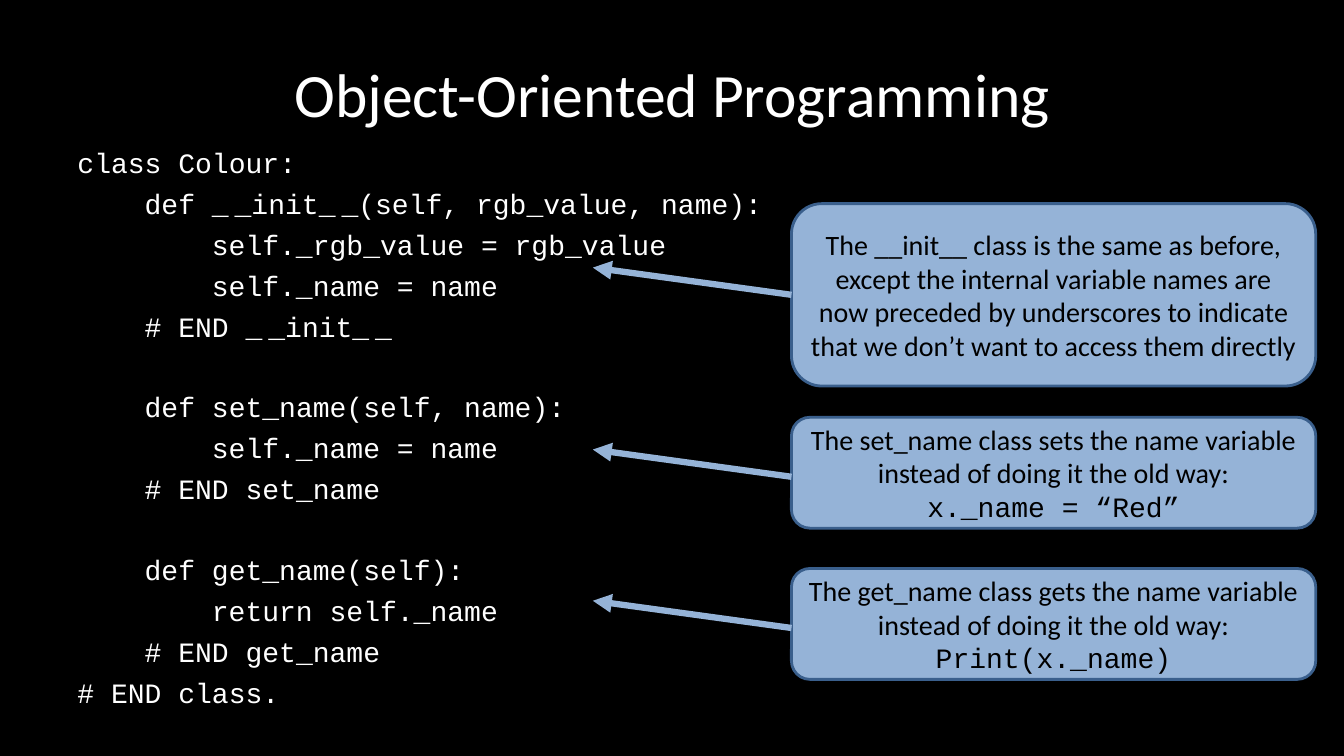
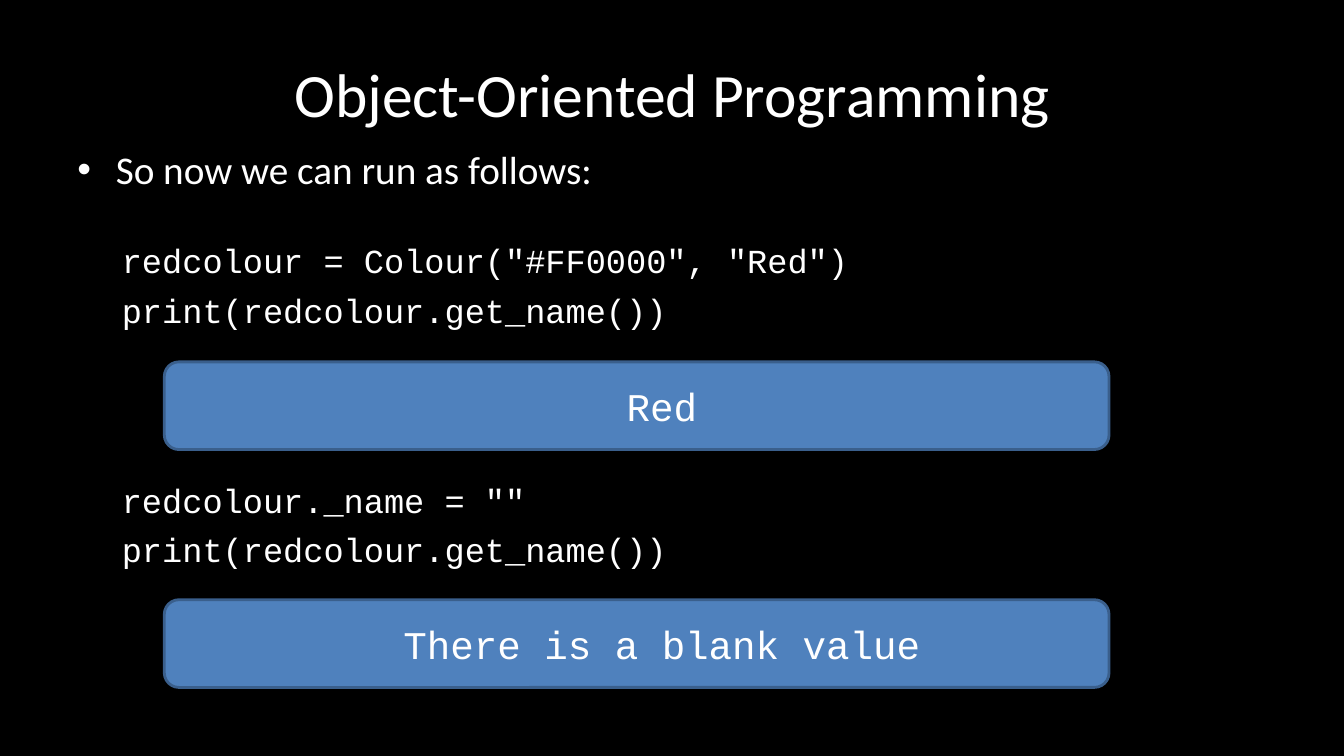
from dataclasses import dataclass

from lxml import etree
from pptx import Presentation
from pptx.dml.color import RGBColor
from pptx.enum.shapes import MSO_CONNECTOR, MSO_SHAPE
from pptx.enum.text import MSO_ANCHOR, PP_ALIGN
from pptx.oxml.ns import qn
from pptx.util import Inches, Pt

LEFT, CENTER = PP_ALIGN.LEFT, PP_ALIGN.CENTER
TOP, MIDDLE = MSO_ANCHOR.TOP, MSO_ANCHOR.MIDDLE
ROUND, STRAIGHT = MSO_SHAPE.ROUNDED_RECTANGLE, MSO_CONNECTOR.STRAIGHT
LEFT_SIDE = 1


@dataclass(frozen=True)
class Theme:
    black: str = "000000"
    white: str = "FFFFFF"
    pale: str = "95B3D7"
    blue: str = "4F81BD"
    edge: str = "3A5F8C"
    sans: str = "Calibri"
    mono: str = "Courier New"
    title: int = 44
    lead: int = 28
    code: int = 24
    small: int = 20
    tiny: int = 7
    gap: float = 4 / 15  # space before a line, as a share of its size
    pitch: float = 1.4  # one code line with its gap, as a share of its size


T = Theme()


@dataclass(frozen=True)
class Box:
    left: float
    top: float
    width: float
    height: float

    def emu(self):
        return [Inches(v) for v in (self.left, self.top, self.width, self.height)]


@dataclass(frozen=True)
class Code:
    text: str
    depth: int = 0
    skip: float = 0  # points left free above the line


@dataclass(frozen=True)
class Note:
    top: float
    height: float
    text: str
    code: str = ""
    drop: float = 0  # arrow start below the middle of the side


TITLE = Box(0.67, 0.3, 12, 1.25)
BODY = Box(0.67, 1.39, 12, 5.75)
STEP = 4 * 0.6 * T.small / 72  # four monospaced characters
BLANK = T.small * T.pitch

CLASS = [
    Code("class Colour:"),
    Code("def _ _init_ _(self, rgb_value, name):", 1),
    Code("self._rgb_value = rgb_value", 2),
    Code("self._name = name", 2),
    Code("# END _ _init_ _", 1),
    Code("def set_name(self, name):", 1, BLANK),
    Code("self._name = name", 2),
    Code("# END set_name", 1),
    Code("def get_name(self):", 1, BLANK),
    Code("return self._name", 2),
    Code("# END get_name", 1),
    Code("# END class."),
]
NOTES = [
    Note(2.02, 1.81, "The __init__ class is the same as before, except the internal "
         "variable names are now preceded by underscores to indicate that we "
         "don’t want to access them directly"),
    Note(4.14, 1.1, "The set_name class sets the name variable instead of doing it "
         "the old way:", "x._name = “Red”", 0.04),
    Note(5.64, 1.1, "The get_name class gets the name variable instead of doing it "
         "the old way:", "Print(x._name)", 0.04),
]
RUN = [
    Code('redcolour = Colour("#FF0000", "Red")', skip=BLANK),
    Code("print(redcolour.get_name())"),
    Code('redcolour._name = ""', skip=3 * T.code * T.pitch),
    Code("print(redcolour.get_name())"),
]
RESULTS = [(3.59, "Red"), (5.95, "There is a blank value")]


def paint(color: str) -> RGBColor:
    return RGBColor.from_string(color)


def write(frame, text: str, *, size: float, font: str = T.sans, color: str = T.white,
          align=LEFT, before: float = 0, indent: float = 0, bullet: str = "") -> None:
    """Add a paragraph; a space between two underscores is set tiny."""
    para = frame.paragraphs[-1]
    if para.runs:
        para = frame.add_paragraph()
    para.alignment = align
    para.space_before = Pt(before)
    props = para._p.get_or_add_pPr()
    props.set("marL", str(Inches(indent)))
    if bullet:
        props.set("indent", str(-Inches(indent)))
        etree.SubElement(props, qn("a:buFont"), typeface="Arial")
        etree.SubElement(props, qn("a:buChar"), char=bullet)
    pieces = [(text, size)]
    if "_ _" in text:
        head, *rest = text.split("_ _")
        pieces = [(head + "_", size)]
        for i, part in enumerate(rest, 1):
            tail = "_" if i < len(rest) else ""
            pieces += [(" ", T.tiny), ("_" + part + tail, size)]
    for part, points in pieces:
        run = para.add_run()
        run.text = part
        run.font.size = Pt(points)
        run.font.name = font
        run.font.color.rgb = paint(color)


def add_text(slide, box: Box, anchor=TOP):
    frame = slide.shapes.add_textbox(*box.emu()).text_frame
    frame.word_wrap = True
    frame.vertical_anchor = anchor
    return frame


def add_panel(slide, box: Box, fill: str):
    panel = slide.shapes.add_shape(ROUND, *box.emu())
    panel.shadow.inherit = False
    panel.fill.solid()
    panel.fill.fore_color.rgb = paint(fill)
    panel.line.color.rgb = paint(T.edge)
    panel.line.width = Pt(2)
    panel.text_frame.word_wrap = True
    panel.text_frame.vertical_anchor = MIDDLE
    return panel


def add_code(frame, lines: list[Code], size: int, base: float = 0) -> None:
    for line in lines:
        write(frame, line.text, size=size, font=T.mono,
              before=size * T.gap + line.skip, indent=base + line.depth * STEP)


def add_note(slide, note: Note) -> None:
    box = Box(7.85, note.top, 5.2, note.height)
    panel = add_panel(slide, box, T.pale)
    form = dict(size=T.small, color=T.black, align=CENTER)
    write(panel.text_frame, note.text, **form)
    if note.code:
        write(panel.text_frame, note.code, font=T.mono, **form)
    start = note.top + note.height / 2 + note.drop
    arrow = slide.shapes.add_connector(
        STRAIGHT, Inches(box.left), Inches(start), Inches(5.88), Inches(start - 0.27))
    if not note.drop:
        arrow.begin_connect(panel, LEFT_SIDE)
    arrow.line.color.rgb = paint(T.pale)
    arrow.line.width = Pt(4.5)
    etree.SubElement(arrow.line._get_or_add_ln(), qn("a:tailEnd"), type="triangle")
    etree.SubElement(arrow._element.spPr, qn("a:effectLst"))


def add_slide(deck):
    """Add a blank slide with the shared title."""
    slide = deck.slides.add_slide(deck.slide_layouts[6])
    write(add_text(slide, TITLE, MIDDLE), "Object-Oriented Programming",
          size=T.title, align=CENTER)
    return slide


def draw_class(deck) -> None:
    slide = add_slide(deck)
    add_code(add_text(slide, BODY), CLASS, T.small)
    for note in NOTES:
        add_note(slide, note)


def draw_run(deck) -> None:
    slide = add_slide(deck)
    frame = add_text(slide, BODY)
    write(frame, "So now we can run as follows:", size=T.lead,
          before=T.lead * T.gap, indent=0.38, bullet="•")
    add_code(frame, RUN, T.code, base=0.44)
    for top, text in RESULTS:
        panel = add_panel(slide, Box(1.63, top, 9.37, 0.87), T.blue)
        write(panel.text_frame, text, size=T.lead, font=T.mono,
              align=CENTER, indent=0.5)


def main() -> None:
    deck = Presentation()
    deck.slide_width, deck.slide_height = Inches(13.33), Inches(7.5)
    back = deck.slide_master.background.fill
    back.solid()
    back.fore_color.rgb = paint(T.black)
    draw_class(deck)
    draw_run(deck)
    deck.save("out.pptx")


if __name__ == "__main__":
    main()
